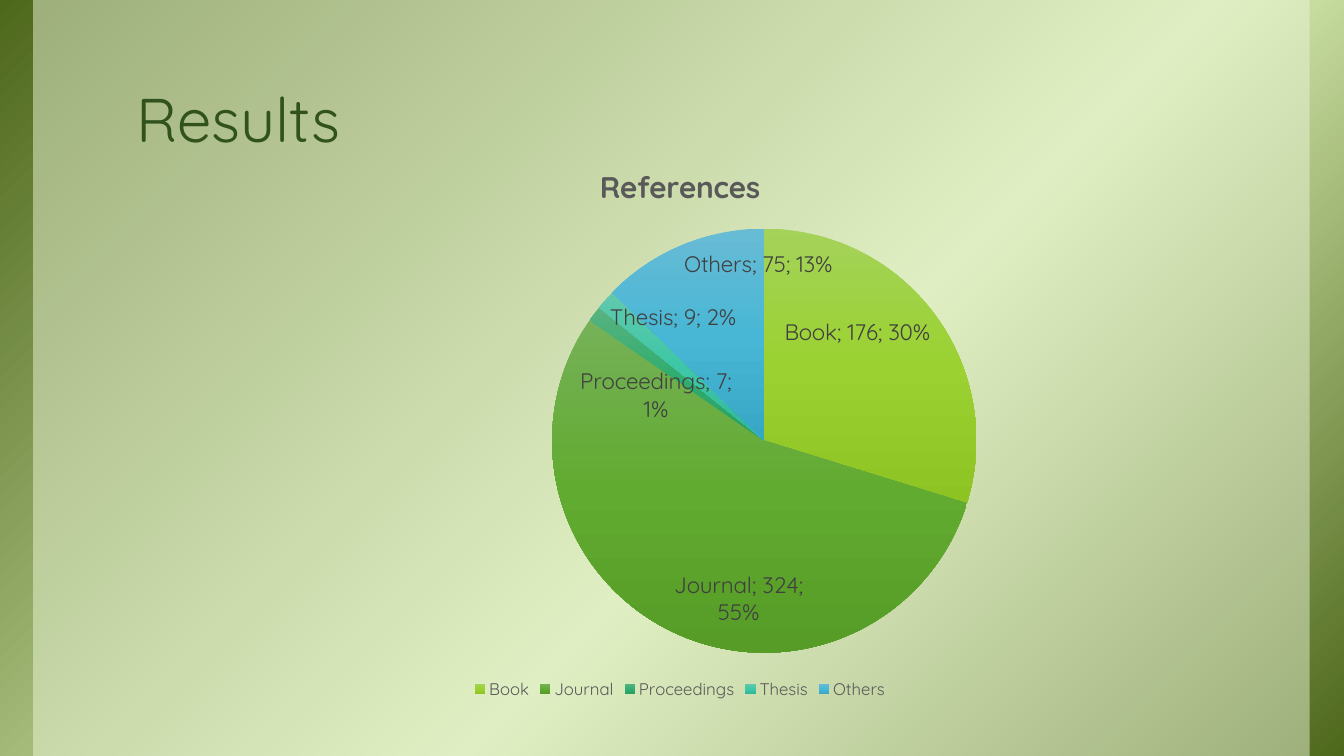
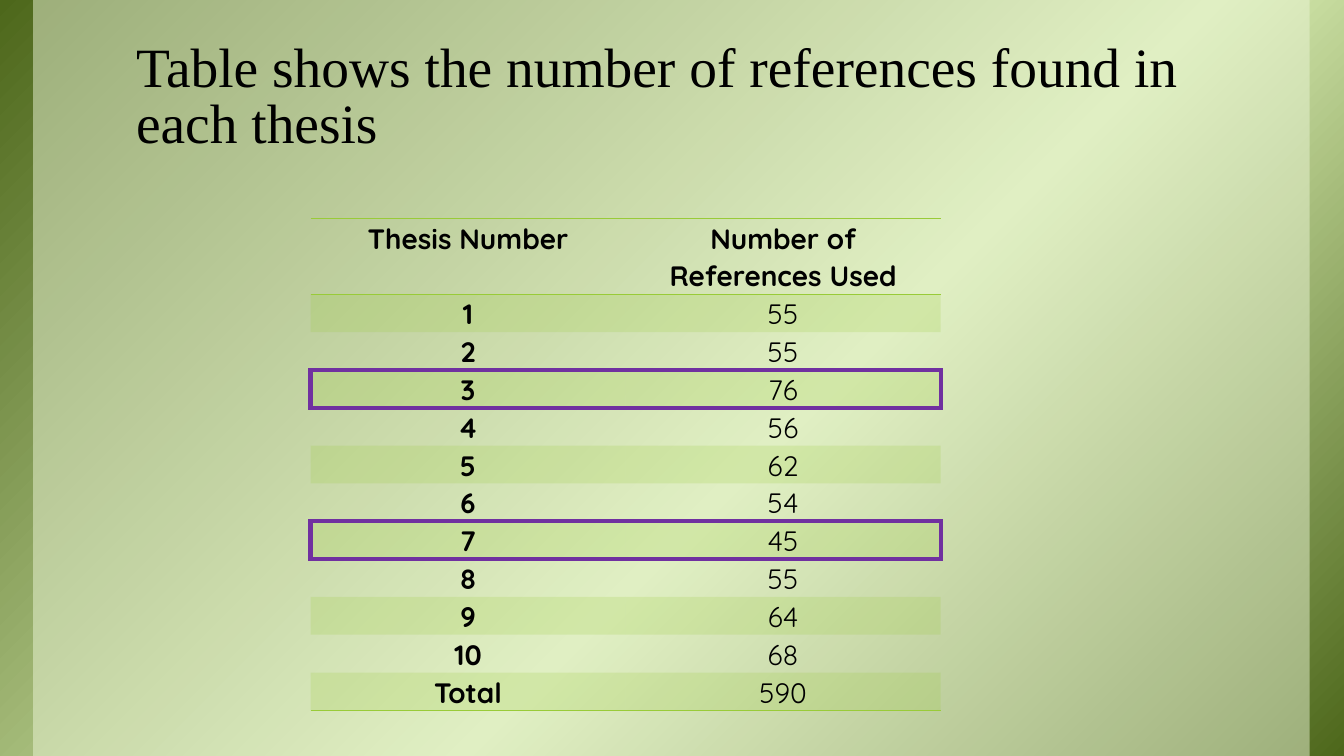
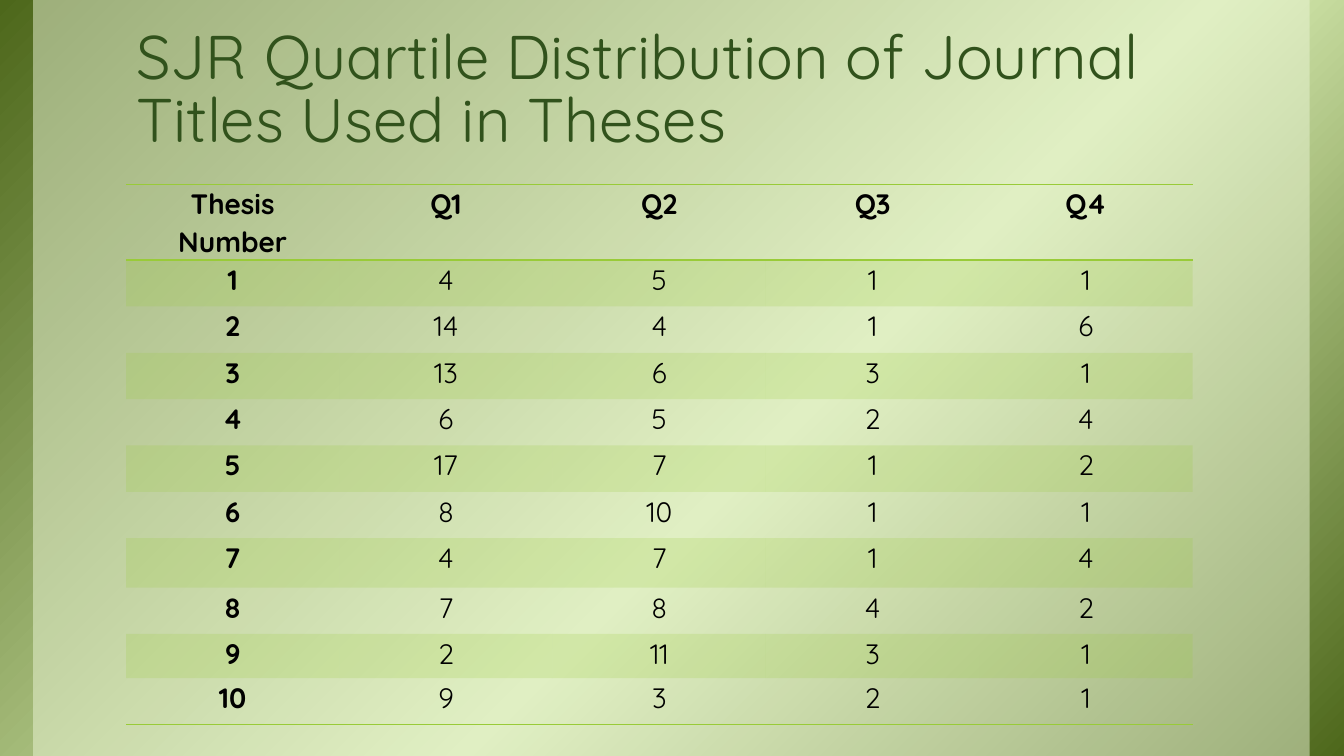
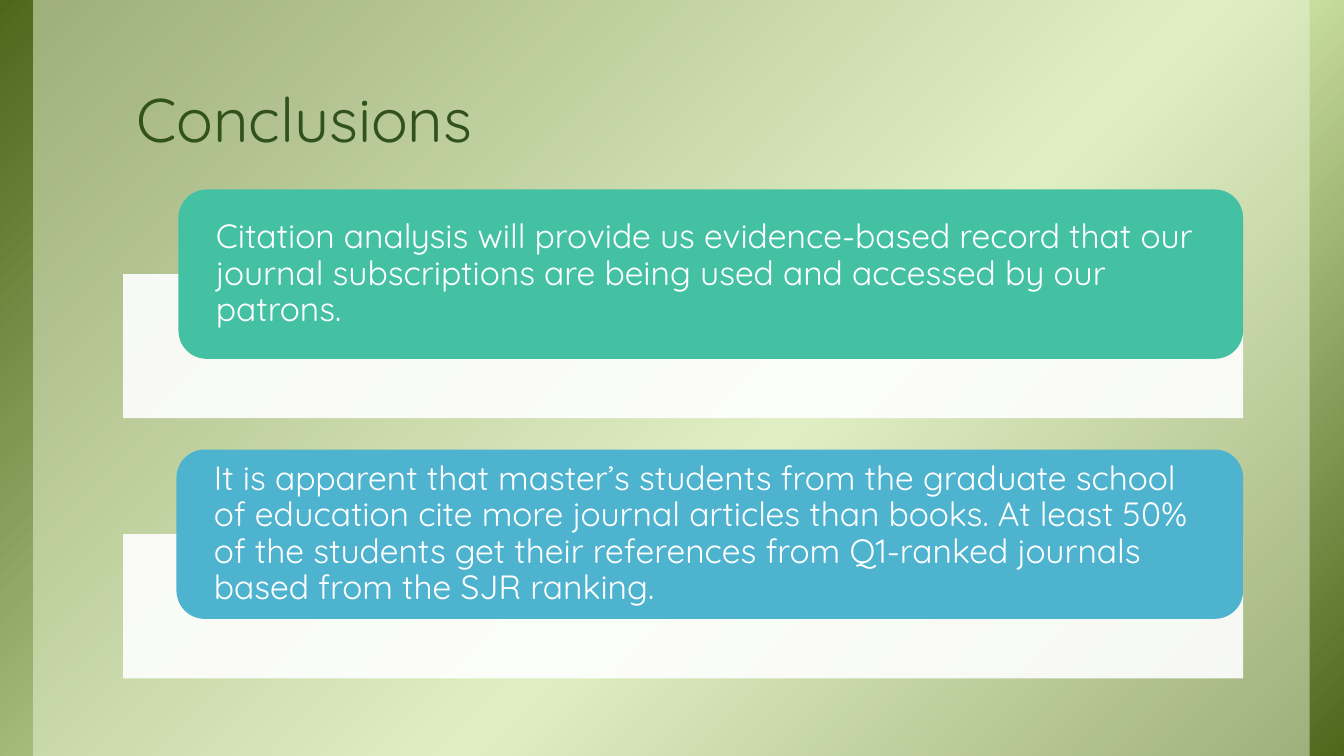
"""Build four slides on the references that theses cite."""
from copy import deepcopy

from lxml import etree
from pptx import Presentation
from pptx.chart.data import CategoryChartData
from pptx.dml.color import RGBColor
from pptx.enum.chart import XL_CHART_TYPE, XL_LABEL_POSITION, XL_LEGEND_POSITION
from pptx.enum.shapes import MSO_SHAPE
from pptx.enum.text import MSO_ANCHOR, PP_ALIGN
from pptx.oxml import parse_xml
from pptx.oxml.ns import nsdecls, qn
from pptx.util import Inches, Pt

PIE = XL_CHART_TYPE.PIE
INSIDE_END = XL_LABEL_POSITION.INSIDE_END
LEGEND_BOTTOM = XL_LEGEND_POSITION.BOTTOM
RECTANGLE = MSO_SHAPE.RECTANGLE
ROUNDED = MSO_SHAPE.ROUNDED_RECTANGLE
TOP, MIDDLE, BOTTOM = MSO_ANCHOR.TOP, MSO_ANCHOR.MIDDLE, MSO_ANCHOR.BOTTOM
LEFT, CENTER = PP_ALIGN.LEFT, PP_ALIGN.CENTER
NO_STYLE = "{2D5ABB26-0587-4C30-8999-92F81FD0307C}"


class Theme:
    font, serif = "Quicksand", "Times New Roman"
    title, black, white = "31521C", "000000", "FFFFFF"
    accent, veil, highlight = "99CB38", "EBF5D7", "7030A0"
    gray, dark_gray = "595959", "404040"
    teal, blue = "44C1A3", "4EB3CF"
    backdrop = [(0, "4D671B"), (58, "D6EAAF"), (100, "4D671B")]
    slices = [("A4D25A", "9BD231", "8DC323"), ("76B158", "62AB31", "569C27"),
              ("58B380", "31AD6F", "279E63"), ("61C8AD", "3EC7A6", "30B897"),
              ("68BBD5", "48B7D5", "38A6C5")]
    title_size, serif_size, body_size, table_size = 44, 39.6, 24, 20
    chart_title_size, label_size, legend_size, chart_size = 21.3, 16, 12, 10


def paint(fill, element, color, opacity=100, angle=0):
    """Fill with one colour, or with a gradient when color is a list of stops."""
    if isinstance(color, list):
        fill.gradient()
        fill.gradient_angle = 360 - angle
        stop_list = element.find(".//" + qn("a:gsLst"))
        stop_list.clear()
        for position, stop_color in color:
            stop = etree.SubElement(stop_list, qn("a:gs"), pos=str(position * 1000))
            etree.SubElement(stop, qn("a:srgbClr"), val=stop_color)
        return
    fill.solid()
    fill.fore_color.rgb = RGBColor.from_string(color)
    if opacity < 100:
        solid = element.find(f".//{qn('a:solidFill')}/{qn('a:srgbClr')}")
        etree.SubElement(solid, qn("a:alpha"), val=str(opacity * 1000))


def write(frame, text, size, color, font=Theme.font, bold=False, align=LEFT,
          spacing=1.0, anchor=TOP, insets=(0, 0)):
    """Put one formatted paragraph into a text frame."""
    frame.word_wrap = True
    frame.vertical_anchor = anchor
    frame.margin_left = frame.margin_right = Inches(insets[0])
    frame.margin_top = frame.margin_bottom = Inches(insets[1])
    paragraph = frame.paragraphs[0]
    paragraph.alignment, paragraph.line_spacing = align, spacing
    run = paragraph.add_run()
    run.text = text
    run.font.size, run.font.name, run.font.bold = Pt(size), font, bold
    run.font.color.rgb = RGBColor.from_string(color)


presentation = Presentation()
presentation.slide_width, presentation.slide_height = Inches(13.33), Inches(7.5)

sans_title = {"size": Theme.title_size, "color": Theme.title}
serif_title = {"size": Theme.serif_size, "color": Theme.black, "font": Theme.serif}
titles = [
    ("Results", sans_title),
    ("Table shows the number of references found in each thesis", serif_title),
    ("SJR Quartile Distribution of Journal Titles Used in Theses", sans_title),
    ("Conclusions", sans_title),
]
slides = []
for title, title_format in titles:
    slide = presentation.slides.add_slide(presentation.slide_layouts[6])
    for left, width, color, opacity in [(0, 13.33, Theme.backdrop, 100),
                                        (0.33, 12.66, Theme.veil, 50)]:
        shape = slide.shapes.add_shape(
            RECTANGLE, Inches(left), 0, Inches(width), Inches(7.5))
        shape.shadow.inherit = False
        shape.line.fill.background()
        paint(shape.fill, shape.element, color, opacity, angle=45)
    title_box = slide.shapes.add_textbox(
        Inches(1.22), Inches(0.08), Inches(11.11), Inches(1.53))
    write(title_box.text_frame, title, spacing=0.85, anchor=BOTTOM,
          insets=(0.13, 0.07), **title_format)
    slides.append(slide)
results_slide, references_slide, quartile_slide, conclusions_slide = slides

chart_data = CategoryChartData()
chart_data.categories = ["Book", "Journal", "Proceedings", "Thesis", "Others"]
chart_data.add_series("References", (176, 324, 7, 9, 75))
chart = results_slide.shapes.add_chart(
    PIE, Inches(2.08), Inches(1.42), Inches(9.33), Inches(5.56), chart_data).chart
chart.font.name, chart.font.size = Theme.font, Pt(Theme.chart_size)
chart.has_title = True
write(chart.chart_title.text_frame, "References", Theme.chart_title_size,
      Theme.gray, bold=True, align=CENTER)
chart.chart_title.include_in_layout = False
chart.has_legend = True
chart.legend.position = LEGEND_BOTTOM
chart.legend.include_in_layout = False

pie = chart.plots[0]
pie.vary_by_categories = True
for index, colors in enumerate(Theme.slices):
    point_fill = pie.series[0].points[index].format.fill
    point_element = chart.element.findall(".//" + qn("c:dPt"))[index]
    paint(point_fill, point_element, list(zip((0, 50, 100), colors)), angle=90)

labels = pie.series[0].data_labels
labels.show_value = labels.show_percentage = labels.show_category_name = True
labels.position = INSIDE_END
for font, size, color in [(chart.legend.font, Theme.legend_size, Theme.gray),
                          (labels.font, Theme.label_size, Theme.dark_gray)]:
    font.name, font.size = Theme.font, Pt(size)
    font.color.rgb = RGBColor.from_string(color)

labels_element = chart.element.find(".//" + qn("c:dLbls"))
separator = etree.Element(qn("c:separator"))
separator.text = "; "
labels_element.find(qn("c:showBubbleSize")).addnext(separator)
proceedings_label = parse_xml(
    f'<c:dLbl {nsdecls("c")}><c:idx val="2"/><c:layout><c:manualLayout>'
    '<c:x val="-0.02"/><c:y val="0.09"/></c:manualLayout></c:layout></c:dLbl>')
for child in labels_element:
    if child.tag != qn("c:showLeaderLines"):
        proceedings_label.append(deepcopy(child))
proceedings_label.append(parse_xml(
    f'<c:extLst {nsdecls("c")}><c:ext uri="{{CE6537A1-D6FC-4f65-9D91-7224C49458BB}}" '
    'xmlns:c15="http://schemas.microsoft.com/office/drawing/2012/chart"><c15:layout>'
    '<c:manualLayout><c:w val="0.21"/><c:h val="0.06"/></c:manualLayout>'
    '</c15:layout></c:ext></c:extLst>'))
labels_element.insert(0, proceedings_label)

plot_area = chart.element.find(".//" + qn("c:plotArea"))
for old_layout in plot_area.findall(qn("c:layout")):
    plot_area.remove(old_layout)
plot_area.insert(0, parse_xml(
    f'<c:layout {nsdecls("c")}><c:manualLayout><c:layoutTarget val="inner"/>'
    '<c:xMode val="edge"/><c:yMode val="edge"/><c:x val="0.364"/><c:y val="0.152"/>'
    '<c:w val="0.451"/><c:h val="0.758"/></c:manualLayout></c:layout>'))

reference_counts = [55, 55, 76, 56, 62, 54, 45, 55, 64, 68]
reference_rows = [("Thesis Number", "Number of References Used"),
                  *enumerate(reference_counts, 1),
                  ("Total", sum(reference_counts))]
quartile_counts = [(4, 5, 1, 1), (14, 4, 1, 6), (13, 6, 3, 1), (6, 5, 2, 4),
                   (17, 7, 1, 2), (8, 10, 1, 1), (4, 7, 1, 4), (7, 8, 4, 2),
                   (2, 11, 3, 1), (9, 3, 2, 1)]
quartile_rows = [("Thesis Number", "Q1", "Q2", "Q3", "Q4")]
quartile_rows += [(number, *counts) for number, counts in enumerate(quartile_counts, 1)]
reference_left, reference_top, reference_width = 3.08, 2.17, 6.25
reference_heights = [0.75] + [4.13 / 11] * 11
quartile_heights = [0.75] + [0.46] * 6 + [0.49, 0.46, 0.44, 0.46]
tables = [
    (references_slide, reference_left, reference_top, reference_width,
     reference_heights, reference_rows),
    (quartile_slide, 1.25, 1.83, 10.58, quartile_heights, quartile_rows),
]
for slide, left, top, width, heights, rows in tables:
    table = slide.shapes.add_table(
        len(rows), len(rows[0]), Inches(left), Inches(top),
        Inches(width), Inches(sum(heights))).table
    table.first_row = table.horz_banding = False
    table._tbl.tblPr.find(qn("a:tableStyleId")).text = NO_STYLE
    for row_index, values in enumerate(rows):
        table.rows[row_index].height = Inches(heights[row_index])
        edges = {0: ("lnT", "lnB"), len(rows) - 1: ("lnB",)}.get(row_index, ())
        for column_index, value in enumerate(values):
            cell = table.cell(row_index, column_index)
            properties = cell._tc.get_or_add_tcPr()
            if row_index % 2:
                paint(cell.fill, properties, Theme.accent, 20)
            else:
                cell.fill.background()
            for position, edge in enumerate(edges):
                properties.insert(position, parse_xml(
                    f'<a:{edge} {nsdecls("a")} w="12700"><a:solidFill>'
                    f'<a:srgbClr val="{Theme.accent}"/></a:solidFill></a:{edge}>'))
            cell.margin_left = cell.margin_right = Inches(0.07)
            cell.margin_top = cell.margin_bottom = 0
            write(cell.text_frame, str(value), Theme.table_size, Theme.black,
                  bold=row_index == 0 or column_index == 0, align=CENTER,
                  spacing=1.07, insets=(0.07, 0))

for thesis_number in (7, 3):
    marker_top = reference_top + sum(reference_heights[:thesis_number])
    marker = references_slide.shapes.add_shape(
        RECTANGLE, Inches(reference_left), Inches(marker_top),
        Inches(reference_width), Inches(reference_heights[thesis_number]))
    marker.shadow.inherit = False
    marker.fill.background()
    marker.line.color.rgb = RGBColor.from_string(Theme.highlight)
    marker.line.width = Pt(3)
    marker.line._get_or_add_ln().append(
        parse_xml(f'<a:miter {nsdecls("a")} lim="800000"/>'))

conclusions = [
    (1.77, Theme.teal, "Citation analysis will provide us evidence-based record that "
     "our journal subscriptions are being used and accessed by our patrons."),
    (1.75, Theme.blue, "It is apparent that master’s students from the graduate school "
     "of education cite more journal articles than books. At least 50% of the students "
     "get their references from Q1-ranked journals based from the SJR ranking."),
]
for index, (left, color, text) in enumerate(conclusions):
    offset = index * 2.58
    for kind, x, y, height, fill_color, opacity in [
            (RECTANGLE, 1.22, 2.72, 1.43, Theme.white, 90),
            (ROUNDED, left, 1.88, 1.68, color, 100)]:
        shape = conclusions_slide.shapes.add_shape(
            kind, Inches(x), Inches(y + offset), Inches(12.33 - x), Inches(height))
        shape.shadow.inherit = False
        shape.line.fill.background()
        paint(shape.fill, shape.element, fill_color, opacity)
    write(shape.text_frame, text, Theme.body_size, Theme.white, spacing=0.9,
          anchor=MIDDLE, insets=(0.29, 0))

presentation.save("out.pptx")
